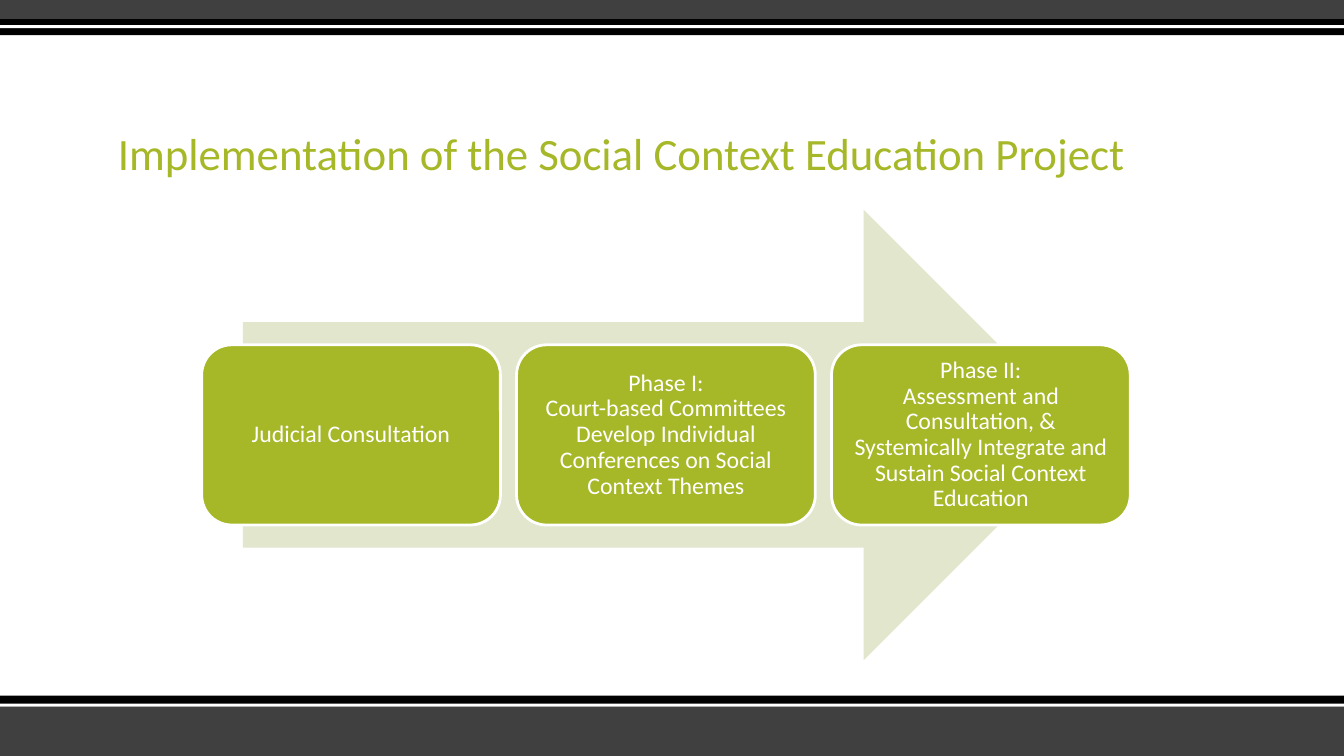
from pptx import Presentation
from pptx.dml.color import RGBColor
from pptx.enum.shapes import MSO_SHAPE
from pptx.enum.text import MSO_ANCHOR, PP_ALIGN
from pptx.util import Inches, Pt

RECTANGLE = MSO_SHAPE.RECTANGLE
ROUNDED = MSO_SHAPE.ROUNDED_RECTANGLE
ARROW = MSO_SHAPE.RIGHT_ARROW
MIDDLE, BOTTOM = MSO_ANCHOR.MIDDLE, MSO_ANCHOR.BOTTOM
LEFT, CENTER = PP_ALIGN.LEFT, PP_ALIGN.CENTER

WIDTH, HEIGHT = 13.33, 7.5
GREEN, PALE_GREEN = "A6B727", "E1E6CD"
GRAY, BLACK, WHITE = "404040", "000000", "FFFFFF"
PHASES = [
    "Judicial Consultation",
    "Phase I:\nCourt-based Committees Develop Individual Conferences on Social Context Themes",
    "Phase II:\nAssessment and Consultation, & Systemically Integrate and Sustain Social Context Education",
]


def color(value):
    """Turn a hex string into a colour."""
    return RGBColor.from_string(value)


def add_filled(slide, kind, box, fill):
    """Add a flat shape without outline."""
    shape = slide.shapes.add_shape(kind, *map(Inches, box))
    shape.shadow.inherit = False
    shape.fill.solid()
    shape.fill.fore_color.rgb = color(fill)
    shape.line.fill.background()
    return shape


def write(text_frame, text, size, text_color, alignment, anchor):
    """Fill a text frame with one styled paragraph."""
    text_frame.word_wrap = True
    text_frame.vertical_anchor = anchor
    paragraph = text_frame.paragraphs[0]
    paragraph.text = text
    paragraph.alignment = alignment
    paragraph.line_spacing = 0.9
    paragraph.font.name = "Calibri"
    paragraph.font.size = Pt(size)
    paragraph.font.color.rgb = color(text_color)


def add_band(slide, top, stripes):
    """Stack full-width stripes, given as offset, height and fill."""
    for offset, height, fill in stripes:
        add_filled(slide, RECTANGLE, (0, top + offset, WIDTH, height), fill)


def add_title(slide, box, text):
    """Add the slide title at the bottom of its box."""
    title = slide.shapes.add_textbox(*map(Inches, box))
    write(title.text_frame, text, 32, GREEN, LEFT, BOTTOM)


def add_process(slide, box, phases):
    """Lay a row of phase cards over a wide arrow."""
    left, top, width, height = box
    inset, gap, card_height = 0.41, 0.16, 0.4 * height
    add_filled(slide, ARROW, (left + inset, top, width - 2 * inset, height), PALE_GREEN)
    card_width = (width - gap * (len(phases) - 1)) / len(phases)
    card_top = top + (height - card_height) / 2
    for index, phase in enumerate(phases):
        card_left = left + index * (card_width + gap)
        card = add_filled(slide, ROUNDED, (card_left, card_top, card_width, card_height), GREEN)
        card.line.color.rgb = color(WHITE)
        card.line.width = Pt(2)
        frame = card.text_frame
        frame.margin_left = frame.margin_right = Inches(0.07)
        frame.margin_top = frame.margin_bottom = Inches(0.07)
        write(frame, phase, 17, WHITE, CENTER, MIDDLE)


def main():
    """Build and save the slide."""
    presentation = Presentation()
    presentation.slide_width = Inches(WIDTH)
    presentation.slide_height = Inches(HEIGHT)
    slide = presentation.slides.add_slide(presentation.slide_layouts[6])
    add_band(slide, 6.9, [(0.1, 0.5, GRAY), (0, 0.11, BLACK), (0.08, 0.03, WHITE)])
    add_band(slide, 0, [(0, 0.19, GRAY), (0.19, 0.16, BLACK), (0.25, 0.03, WHITE)])
    add_title(slide, (1.07, 0.67, 11.1, 1.17),
              "Implementation of the Social Context Education Project")
    add_process(slide, (2, 2.08, 9.21, 4.47), PHASES)
    presentation.save("out.pptx")


if __name__ == "__main__":
    main()
